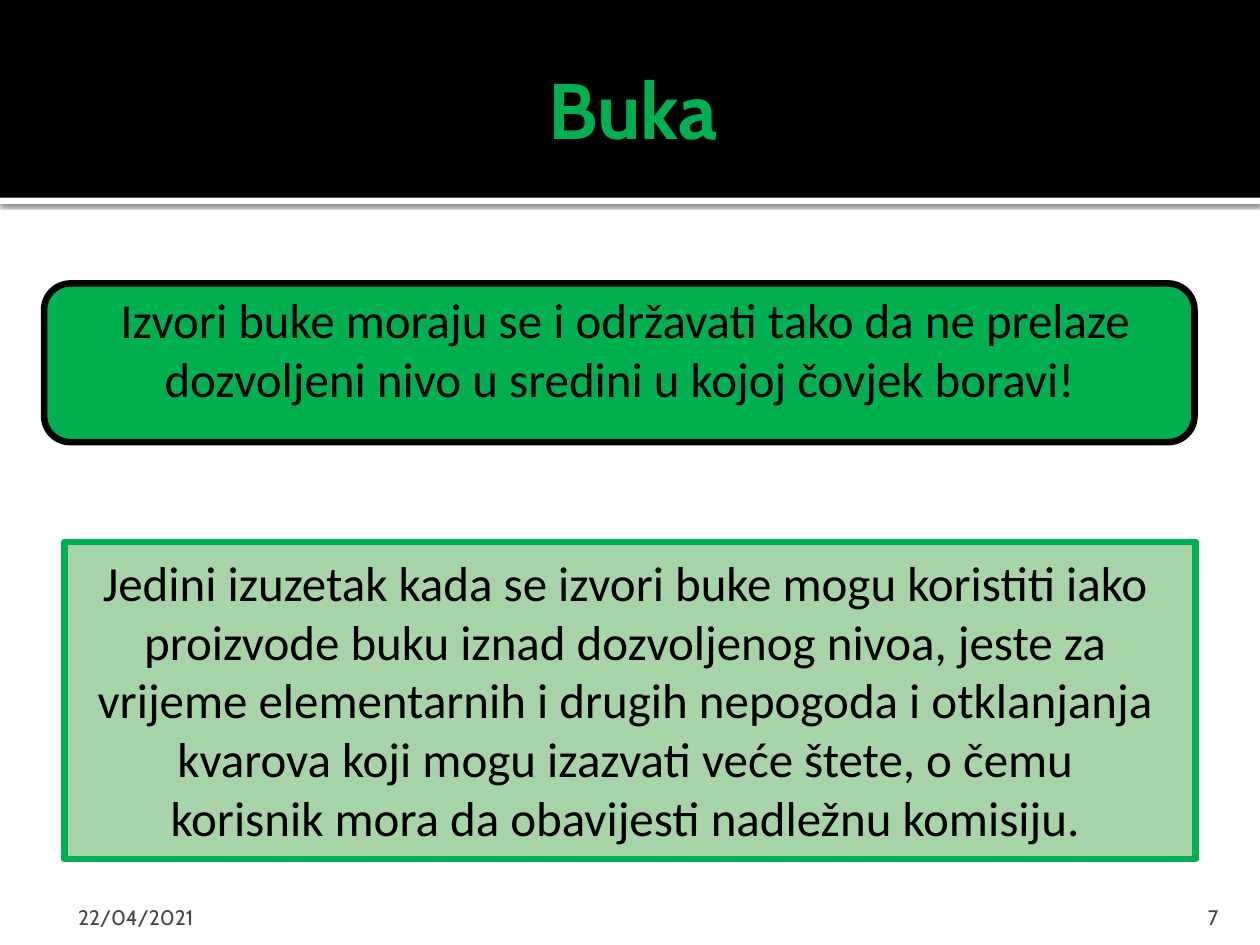
from lxml import etree
from pptx import Presentation
from pptx.dml.color import RGBColor
from pptx.enum.shapes import MSO_SHAPE as Preset
from pptx.enum.text import MSO_ANCHOR as Anchor, PP_ALIGN as Align
from pptx.oxml.ns import qn
from pptx.util import Pt

BLACK = RGBColor(0x00, 0x00, 0x00)
WHITE = RGBColor(0xFF, 0xFF, 0xFF)
GREEN = RGBColor(0x00, 0xB0, 0x50)
LIGHT_GREEN = RGBColor(0xA6, 0xD4, 0xA7)
GREY = RGBColor(0x45, 0x45, 0x45)

HEADING_FONT, BODY_FONT = "Cabin", "Calibri"
SLIDE_WIDTH, SLIDE_HEIGHT = 720, 540

RULE = ("Izvori buke moraju se i održavati tako da ne prelaze dozvoljeni nivo "
        "u sredini u kojoj čovjek boravi! ")
EXCEPTION = ("Jedini izuzetak kada se izvori buke mogu koristiti iako proizvode buku "
             "iznad dozvoljenog nivoa, jeste za vrijeme elementarnih i drugih nepogoda "
             "i otklanjanja kvarova koji mogu izazvati veće štete, o čemu korisnik "
             "mora da obavijesti nadležnu komisiju.")


def add_panel(slide, preset, box, fill, line=None):
    shape = slide.shapes.add_shape(preset, *map(Pt, box))
    shape.shadow.inherit = False
    shape.fill.solid()
    shape.fill.fore_color.rgb = fill
    if line is None:
        shape.line.fill.background()
    else:
        shape.line.color.rgb = line
        shape.line.width = Pt(3.78)
    return shape


def add_soft_shadow(shape):
    effects = shape._element.spPr.find(qn("a:effectLst"))
    shadow = etree.SubElement(effects, qn("a:outerShdw"), blurRad=str(Pt(2.5)),
                              dist=str(Pt(0.8)), dir="5400000", rotWithShape="0")
    color = etree.SubElement(shadow, qn("a:srgbClr"), val=str(BLACK))
    etree.SubElement(color, qn("a:alpha"), val="60000")


def write_text(shape, text, font, size, color, align, anchor, insets, bold=False):
    """Set the text as one run; insets are left, top, right, bottom."""
    frame = shape.text_frame
    frame.word_wrap = True
    frame.vertical_anchor = anchor
    (frame.margin_left, frame.margin_top,
     frame.margin_right, frame.margin_bottom) = map(Pt, insets)
    paragraph = frame.paragraphs[0]
    paragraph.alignment = align
    run = paragraph.add_run()
    run.text = text
    run.font.name, run.font.size, run.font.bold = font, Pt(size), bold
    run.font.color.rgb = color


def add_header(slide, box, text):
    left, top, width, height = box
    stripe = add_panel(slide, Preset.RECTANGLE, (left, top + height, width, 3.6), WHITE)
    add_soft_shadow(stripe)
    add_panel(slide, Preset.RECTANGLE, box, BLACK)
    title = slide.shapes.title
    title.left, title.top = Pt(left + 36), Pt(top + 12.24)
    title.width, title.height = Pt(width - 72), Pt(98.64)
    write_text(title, text, HEADING_FONT, 45, GREEN, Align.CENTER, Anchor.MIDDLE,
               (7.2, 3.6, 3.6, 3.6), bold=True)
    # The title placeholder starts at the back; bring it above the band.
    title._element.getparent().append(title._element)


def add_statement(slide, preset, box, fill, line, text, top_inset):
    add_panel(slide, preset, box, fill, line)
    top, height = box[1], box[3]
    text_box = slide.shapes.add_textbox(Pt(48.24), Pt(top), Pt(617.76), Pt(height))
    write_text(text_box, text, BODY_FONT, 28, BLACK, Align.CENTER, Anchor.TOP,
               (7.2, top_inset, 7.2, 3.6))


def add_footer(slide, box, date, number):
    left, top, width, height = box
    fields = ((date, left, 168, Align.LEFT, (8.64, 3.6, 3.6, 0)),
              (number, left + width - 57.6, 57.6, Align.RIGHT, (7.2, 3.6, 7.2, 0)))
    for text, field_left, field_width, align, insets in fields:
        text_box = slide.shapes.add_textbox(Pt(field_left), Pt(top), Pt(field_width), Pt(height))
        write_text(text_box, text, HEADING_FONT, 12, GREY, align, Anchor.BOTTOM, insets)


def main():
    presentation = Presentation()
    presentation.slide_width, presentation.slide_height = Pt(SLIDE_WIDTH), Pt(SLIDE_HEIGHT)
    slide = presentation.slides.add_slide(presentation.slide_layouts[5])
    add_header(slide, (0, 0, SLIDE_WIDTH, 113), "Buka")
    add_statement(slide, Preset.ROUNDED_RECTANGLE, (25.2, 162, 657.4, 90.7),
                  GREEN, BLACK, RULE, 3.6)
    add_statement(slide, Preset.RECTANGLE, (36.7, 309.6, 646.6, 181.4),
                  LIGHT_GREEN, GREEN, EXCEPTION, 6)
    add_footer(slide, (36, 509.8, 667.4, 21.6), "22/04/2021", "7")
    presentation.save("out.pptx")


if __name__ == "__main__":
    main()
